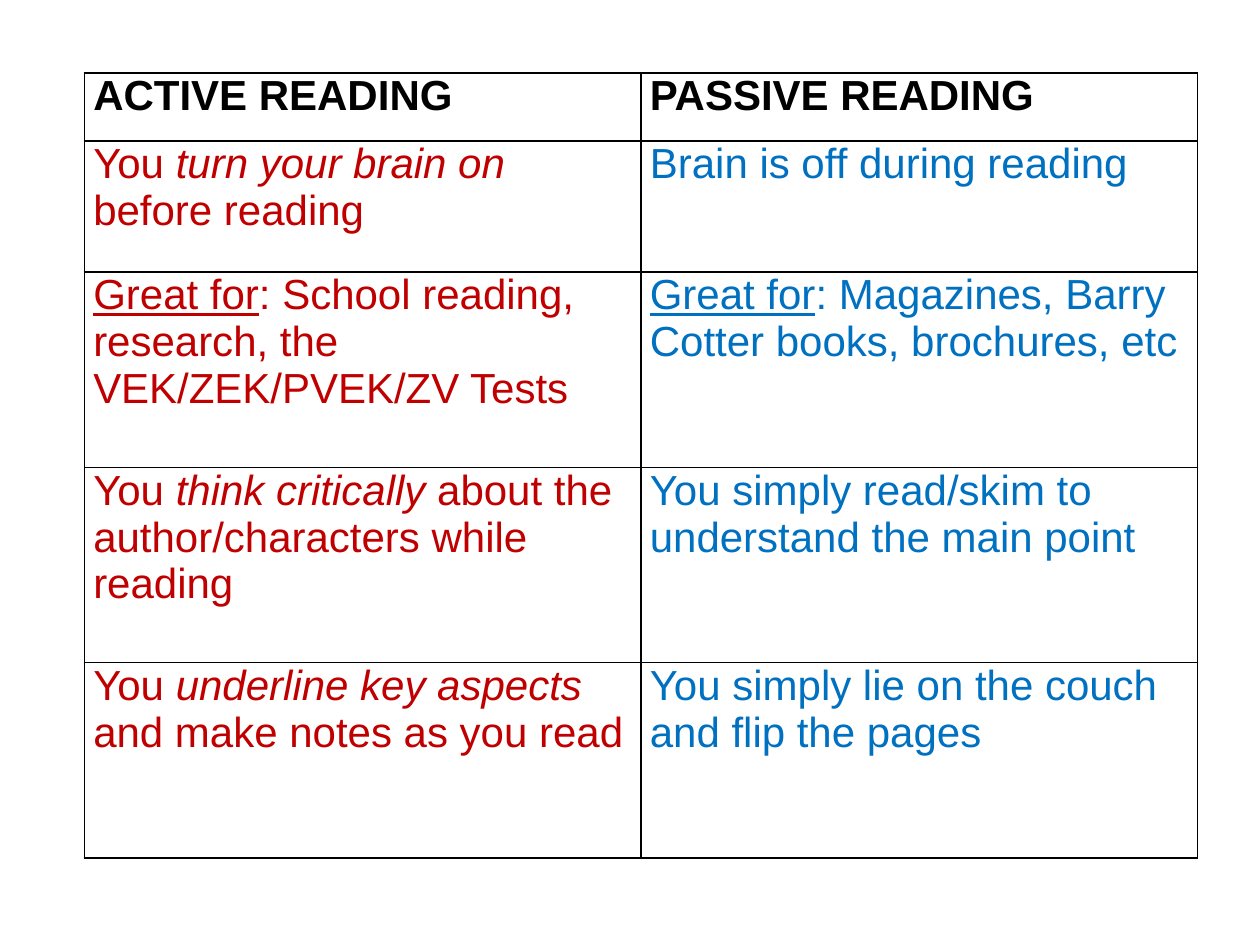
"""Build a slide with a table comparing active and passive reading."""
from lxml.etree import SubElement
from pptx import Presentation
from pptx.dml.color import RGBColor as RGB
from pptx.oxml.ns import qn
from pptx.util import Cm, Pt

COLORS = {"header": "000000", "active": "C00000", "passive": "0070C0", "border": "000000"}
HEADINGS = ("ACTIVE READING", "PASSIVE READING")
ROWS = [
    ([("You ", ""), ("turn your brain on", "i"), (" before reading", "")],
     [("Brain is off during reading", "")]),
    ([("Great for", "u"), (": School reading, research, the VEK/ZEK/PVEK/ZV Tests", "")],
     [("Great for", "u"), (": Magazines, Barry Cotter books, brochures, etc", "")]),
    ([("You ", ""), ("think critically", "i"),
      (" about the author/characters while reading", "")],
     [("You simply read/skim to understand the main point", "")]),
    ([("You ", ""), ("underline key aspects", "i"), (" and make notes as you read", "")],
     [("You simply lie on the couch and flip the pages", "")]),
]
ROW_HEIGHTS = [1.37, 2.64, 3.94, 3.94, 3.94]
COL_WIDTH = 11.22


def add_border(cell, side):
    ln = SubElement(cell._tc.get_or_add_tcPr(), qn(f"a:{side}"), w=str(Pt(1)))
    fill = SubElement(ln, qn("a:solidFill"))
    SubElement(fill, qn("a:srgbClr"), val=COLORS["border"])


prs = Presentation()
prs.slide_width, prs.slide_height = Cm(25.4), Cm(19.05)
slide = prs.slides.add_slide(prs.slide_layouts[6])

grid = [[[(heading, "b")] for heading in HEADINGS], *ROWS]
table = slide.shapes.add_table(len(grid), 2, Cm(1.7), Cm(1.47),
                               Cm(2 * COL_WIDTH), Cm(sum(ROW_HEIGHTS))).table
table.first_row = table.horz_banding = False
for col in table.columns:
    col.width = Cm(COL_WIDTH)
for row, height in zip(table.rows, ROW_HEIGHTS):
    row.height = Cm(height)

for i, cells in enumerate(grid):
    for j, runs in enumerate(cells):
        cell = table.cell(i, j)
        for side in ("lnL", "lnR", "lnT", "lnB"):
            add_border(cell, side)
        cell.fill.background()
        cell.margin_left = cell.margin_right = Cm(0.18)
        cell.margin_top = cell.margin_bottom = 0
        color = COLORS["header" if i == 0 else ("active", "passive")[j]]
        p = cell.text_frame.paragraphs[0]
        for text, style in runs:
            r = p.add_run()
            r.text = text
            r.font.name, r.font.size = "Arial", Pt(24)
            r.font.bold = style == "b"
            r.font.italic = style == "i"
            r.font.underline = style == "u"
            r.font.color.rgb = RGB.from_string(color)

prs.save("out.pptx")
